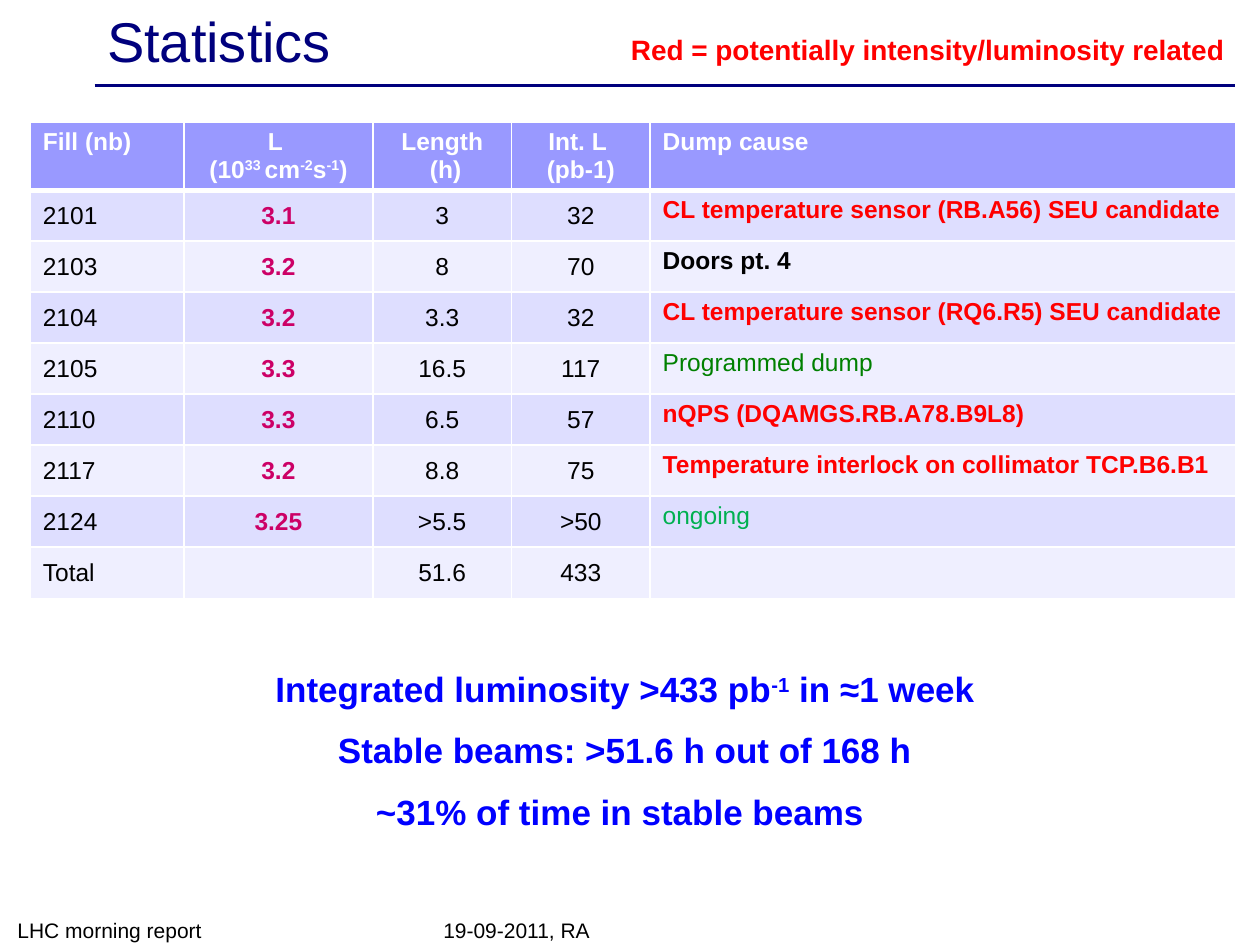
from dataclasses import dataclass

from lxml import etree
from pptx import Presentation
from pptx.dml.color import RGBColor
from pptx.enum.shapes import MSO_CONNECTOR
from pptx.enum.text import MSO_ANCHOR, PP_ALIGN
from pptx.oxml.ns import qn
from pptx.util import Inches, Pt

LEFT, CENTER = PP_ALIGN.LEFT, PP_ALIGN.CENTER
TOP, MIDDLE, BOTTOM = MSO_ANCHOR.TOP, MSO_ANCHOR.MIDDLE, MSO_ANCHOR.BOTTOM
STRAIGHT = MSO_CONNECTOR.STRAIGHT

COLORS = {
    "navy": "00007D", "blue": "0000FF", "red": "FF0000", "magenta": "CC0066",
    "green": "008000", "mint": "00B050", "black": "000000", "white": "FFFFFF",
    "header": "9999FF", "band": "DEDEFF", "pale": "EFEFFF",
}


@dataclass
class Style:
    size: float
    color: str = "black"
    bold: bool = False
    align: PP_ALIGN = LEFT
    anchor: MSO_ANCHOR = TOP
    gap: float = 0  # points before each paragraph after the first


@dataclass
class Note:
    box: tuple[float, float, float, float]
    lines: list[str]
    style: Style
    wrap: bool = True


@dataclass
class Fill:
    number: str
    luminosity: str
    hours: str
    integrated: str
    cause: str
    cause_color: str = "red"
    cause_bold: bool = True


COLUMN_WIDTHS = [1.22, 1.5, 1.1, 1.1, 4.65]
TABLE_LEFT, TABLE_TOP, TABLE_HEIGHT, HEADER_HEIGHT = 0.24, 0.97, 3.78, 0.54

# Text between carets is superscript
HEADINGS = [
    ["Fill (nb)"],
    ["L ", "(10^33 ^cm^-2^s^-1^)"],
    ["Length", " (h)"],
    ["Int. L ", "(pb-1)"],
    ["Dump cause"],
]
FILLS = [
    Fill("2101", "3.1", "3", "32", "CL temperature sensor (RB.A56) SEU candidate"),
    Fill("2103", "3.2", "8", "70", "Doors pt. 4", "black"),
    Fill("2104", "3.2", "3.3", "32", "CL temperature sensor (RQ6.R5) SEU candidate"),
    Fill("2105", "3.3", "16.5", "117", "Programmed dump", "green", False),
    Fill("2110", "3.3", "6.5", "57", "nQPS (DQAMGS.RB.A78.B9L8)"),
    Fill("2117", "3.2", "8.8", "75", "Temperature interlock on collimator TCP.B6.B1"),
    Fill("2124", "3.25", ">5.5", ">50", "ongoing", "mint", False),
    Fill("Total", "", "51.6", "433", ""),
]
NOTES = [
    Note((0.59, 5.25, 8.74, 1.45),
         ["Integrated luminosity >433 pb^-1^ in ≈1 week",
          "Stable beams: >51.6 h out of 168 h",
          "~31% of time in stable beams "],
         Style(20, "blue", True, CENTER, gap=11)),
    Note((4.91, 0.21, 4.97, 0.37), ["Red = potentially intensity/luminosity related"],
         Style(16, "red", True), wrap=False),
    Note((3.42, 7.25, 3.17, 0.28), ["19-09-2011, RA"], Style(12, anchor=BOTTOM)),
    Note((0.04, 7.24, 2.33, 0.29), ["LHC morning report"], Style(12, anchor=BOTTOM)),
]


def rgb(name: str) -> RGBColor:
    return RGBColor.from_string(COLORS[name])


def write(frame, lines: list[str], style: Style) -> None:
    font_format = {"name": "Arial", "size": Pt(style.size), "bold": style.bold}
    for index, line in enumerate(lines):
        paragraph = frame.add_paragraph() if index else frame.paragraphs[0]
        paragraph.alignment = style.align
        if index:
            paragraph.space_before = Pt(style.gap)
        for position, piece in enumerate(line.split("^")):
            if not piece:
                continue
            run = paragraph.add_run()
            run.text = piece
            for attribute, value in font_format.items():
                setattr(run.font, attribute, value)
            run.font.color.rgb = rgb(style.color)
            if position % 2:
                run._r.get_or_add_rPr().set("baseline", "30000")


def add_note(slide, note: Note) -> None:
    frame = slide.shapes.add_textbox(*map(Inches, note.box)).text_frame
    frame.word_wrap = note.wrap
    frame.vertical_anchor = note.style.anchor
    write(frame, note.lines, note.style)


def set_borders(cell, widths: dict[str, float]) -> None:
    properties = cell._tc.get_or_add_tcPr()
    for index, (side, width) in enumerate(widths.items()):
        border = etree.Element(qn(f"a:ln{side}"), w=str(Pt(width)))
        solid = etree.SubElement(border, qn("a:solidFill"))
        etree.SubElement(solid, qn("a:srgbClr"), val=COLORS["white"])
        properties.insert(index, border)


def fill_cell(cell, lines: list[str], style: Style, background: str,
              top: float = 1, bottom: float = 1) -> None:
    cell.fill.solid()
    cell.fill.fore_color.rgb = rgb(background)
    set_borders(cell, {"L": 1, "R": 1, "T": top, "B": bottom})
    cell.vertical_anchor = style.anchor
    write(cell.text_frame, lines, style)


def add_fill_table(slide) -> None:
    table = slide.shapes.add_table(
        len(FILLS) + 1, len(COLUMN_WIDTHS), Inches(TABLE_LEFT), Inches(TABLE_TOP),
        Inches(sum(COLUMN_WIDTHS)), Inches(TABLE_HEIGHT)).table
    table.horz_banding = False
    for column, width in zip(table.columns, COLUMN_WIDTHS):
        column.width = Inches(width)
    row_height = (TABLE_HEIGHT - HEADER_HEIGHT) / len(FILLS)
    for index, row in enumerate(table.rows):
        row.height = Inches(row_height if index else HEADER_HEIGHT)

    # Header row, with the outer columns left-aligned
    last = len(HEADINGS) - 1
    for column, heading in enumerate(HEADINGS):
        align = LEFT if column in (0, last) else CENTER
        fill_cell(table.cell(0, column), heading,
                  Style(14, "white", True, align), "header", bottom=3)

    # One row per fill, in alternating bands
    number = Style(14, anchor=MIDDLE)
    luminosity = Style(14, "magenta", True, CENTER, MIDDLE)
    figure = Style(14, align=CENTER, anchor=MIDDLE)
    for row, fill in enumerate(FILLS, start=1):
        cause = Style(14, fill.cause_color, fill.cause_bold)
        entries = [(fill.number, number), (fill.luminosity, luminosity),
                   (fill.hours, figure), (fill.integrated, figure), (fill.cause, cause)]
        for column, (entry, style) in enumerate(entries):
            fill_cell(table.cell(row, column), [entry], style,
                      "band" if row % 2 else "pale", top=3 if row == 1 else 1)


def add_title(slide) -> None:
    title = slide.shapes.title
    title.left, title.top, title.width, title.height = map(Inches, (0.75, 0.03, 9, 0.57))
    title.text_frame.vertical_anchor = MIDDLE
    write(title.text_frame, ["Statistics"], Style(32, "navy"))

    # Rule under the title
    rule = slide.shapes.add_connector(
        STRAIGHT, Inches(0.75), Inches(0.68), Inches(9.8), Inches(0.68))
    rule.line.color.rgb = rgb("navy")
    rule.line.width = Pt(2)
    etree.SubElement(rule._element.spPr, qn("a:effectLst"))


def main() -> None:
    presentation = Presentation()
    presentation.slide_width, presentation.slide_height = Inches(10), Inches(7.5)
    slide = presentation.slides.add_slide(presentation.slide_layouts[5])
    add_title(slide)
    add_fill_table(slide)
    for note in NOTES:
        add_note(slide, note)
    presentation.save("out.pptx")


if __name__ == "__main__":
    main()
